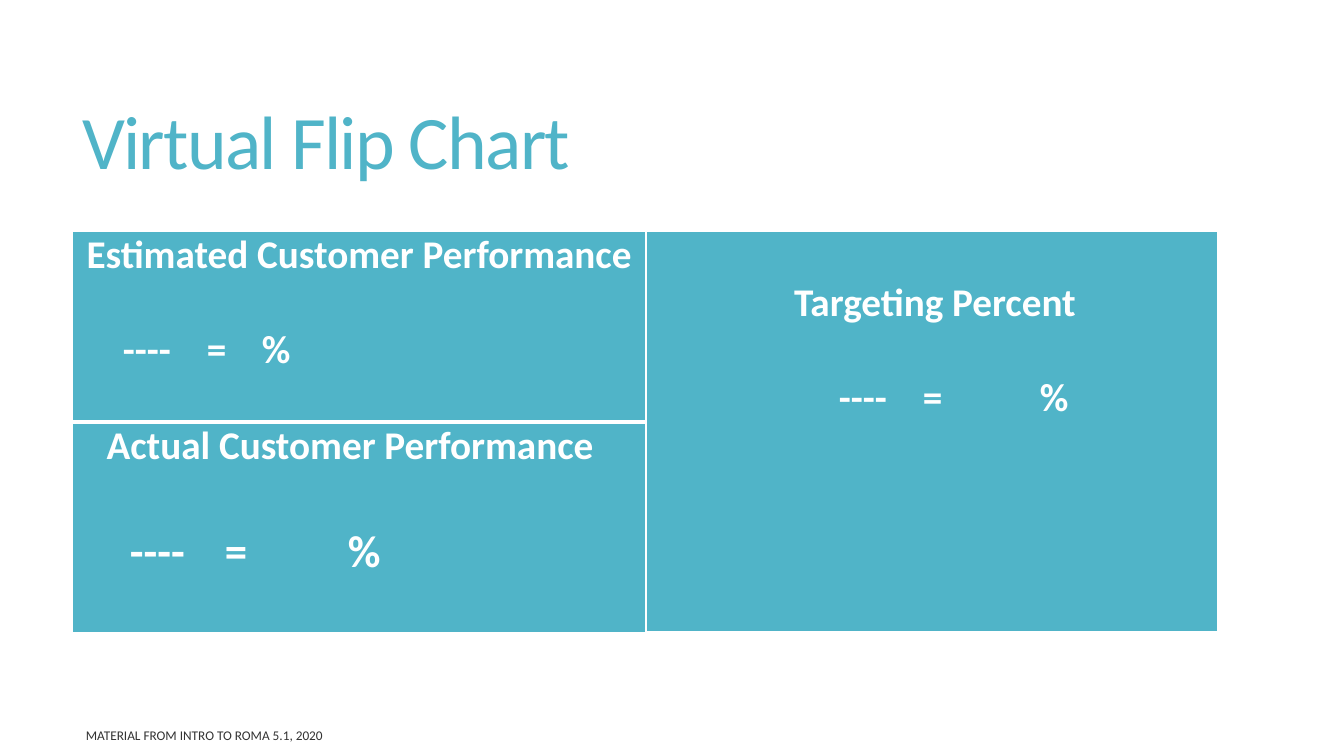
from pptx import Presentation
from pptx.dml.color import RGBColor
from pptx.enum.text import MSO_ANCHOR as Anchor, MSO_AUTO_SIZE as AutoSize, PP_ALIGN as Align
from pptx.oxml import parse_xml
from pptx.oxml.ns import nsdecls
from pptx.util import Emu, Pt

TEAL = RGBColor(0x50, 0xB4, 0xC8)
WHITE = RGBColor(0xFF, 0xFF, 0xFF)
CHARCOAL = RGBColor(0x33, 0x33, 0x33)
EMU_PER_PX = 914400 / 100.8
FORMULA = "\t----\t=\t%"


def px(length):
    return Emu(round(length * EMU_PER_PX))


class FlipChart:
    font_name = "Calibri"
    heading_size = 28
    inset = 7

    def __init__(self, deck):
        self.slide = deck.slides.add_slide(deck.slide_layouts[5])

    def style(self, para, size, color, bold=False, align=Align.LEFT):
        para.alignment = align
        font = para.font
        font.name, font.size, font.bold = self.font_name, Pt(size), bold
        font.color.rgb = color

    def title(self, text, left, top, width, height):
        box = self.slide.shapes.title
        box.left, box.top, box.width, box.height = map(px, (left, top, width, height))
        frame = box.text_frame
        frame.word_wrap, frame.auto_size = True, AutoSize.NONE
        frame.vertical_anchor = Anchor.MIDDLE
        para = frame.paragraphs[0]
        span = para.add_run()
        span.text = text
        span._r.get_or_add_rPr().set("spc", "-120")
        para.line_spacing = 0.85
        self.style(para, 54, TEAL)

    def label(self, text, left, top, width, height):
        box = self.slide.shapes.add_textbox(*map(px, (left, top, width, height)))
        frame = box.text_frame
        frame.word_wrap = True
        frame.vertical_anchor = Anchor.MIDDLE
        para = frame.paragraphs[0]
        para.text = text
        self.style(para, 9.5, CHARCOAL)

    def table(self, left, top, widths, heights):
        frame = self.slide.shapes.add_table(
            len(heights), len(widths), px(left), px(top), px(sum(widths)), px(sum(heights)))
        table = frame.table
        table.first_row = table.horz_banding = False
        for column, width in zip(table.columns, widths):
            column.width = px(width)
        for row, height in zip(table.rows, heights):
            row.height = px(height)
        return table

    def borders(self, cell, bottom):
        properties = cell._tc.get_or_add_tcPr()
        for index, (side, width) in enumerate(zip("LRTB", (1, 1, 1, bottom))):
            properties.insert(index, parse_xml(
                f'<a:ln{side} {nsdecls("a")} w="{Pt(width)}"><a:solidFill>'
                f'<a:srgbClr val="{WHITE}"/></a:solidFill></a:ln{side}>'))

    def tabs(self, para, stops):
        tab_list = "".join(f'<a:tab pos="{px(stop)}" algn="l"/>' for stop in stops)
        para._p.get_or_add_pPr().append(
            parse_xml(f'<a:tabLst {nsdecls("a")}>{tab_list}</a:tabLst>'))

    def panel(self, cell, heading, stops, size=28, gap=34, bottom=3,
              left=inset, top=0, right=inset):
        cell.fill.solid()
        cell.fill.fore_color.rgb = TEAL
        self.borders(cell, bottom)
        cell.margin_left, cell.margin_top = px(left), px(top)
        cell.margin_right, cell.margin_bottom = px(right), 0
        para = cell.text_frame.paragraphs[0]
        para.text = heading
        self.style(para, self.heading_size, WHITE, True, Align.CENTER)
        para = cell.text_frame.add_paragraph()
        para.text = FORMULA
        self.tabs(para, stops)
        para.space_before = Pt(gap)
        self.style(para, size, WHITE, True)


def main():
    deck = Presentation()
    deck.slide_width, deck.slide_height = px(1344), px(756)
    chart = FlipChart(deck)
    chart.title("Virtual Flip Chart", 72, 55, 1187, 182)
    table = chart.table(72, 231, (574, 572), (191, 211))
    table.cell(0, 1).merge(table.cell(1, 1))
    chart.panel(table.cell(0, 0), "Estimated Customer Performance", (44, 128, 183))
    chart.panel(table.cell(0, 1), "Targeting Percent", (180, 264, 381), left=13, top=48)
    chart.panel(table.cell(1, 0), "Actual Customer Performance", (51, 146, 269),
                size=32, gap=39, bottom=1, right=25)
    chart.label("MATERIAL FROM INTRO TO ROMA 5.1, 2020", 76, 723, 554, 25)
    deck.save("out.pptx")


if __name__ == "__main__":
    main()
